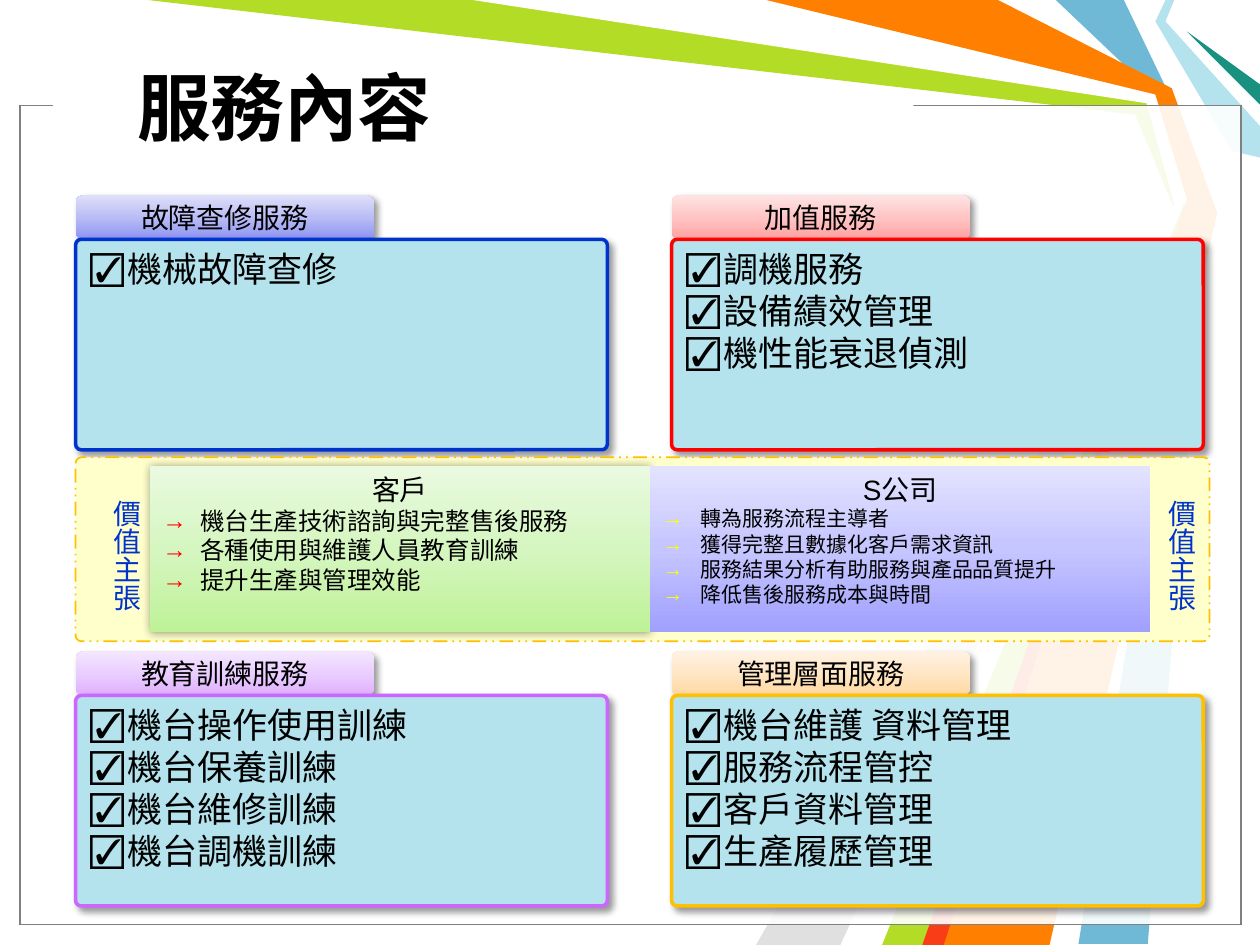
from lxml.etree import SubElement as Sub
from pptx import Presentation
from pptx.dml.color import RGBColor as RGB
from pptx.enum.dml import MSO_LINE as Dash
from pptx.enum.shapes import MSO_SHAPE as Kind
from pptx.enum.text import MSO_ANCHOR as Anchor, PP_ALIGN as Align
from pptx.oxml.ns import qn
from pptx.util import Inches, Pt

HEX = {
    "sky": "6FB9D7", "lime": "B3DC27", "mist": "E0E0E0", "white": "FFFFFF",
    "pale": "B4E3EE", "teal": "189180", "orange": "FF7F00", "flame": "F93D17",
    "black": "000000", "gray": "808080", "blue": "0033CC", "red": "FF0000",
    "violet": "CC66FF", "gold": "FFC000", "cream": "FFFFCC", "yellow": "FFFF00",
}

# Gradient stops, from bottom to top
FADE = {
    "blue": ("8C92F2", "BABDF5", "DEDFF9"),
    "red": ("FFA0A0", "FFC5C5", "FFE3E3"),
    "violet": ("DFAFFF", "EACEFF", "F4E7FF"),
    "gold": ("FFD8A0", "FFE6C5", "FFF2E3"),
    "lime": ("BEF297", "D5F6C0", "EAFAE0"),
    "iris": ("A0A0FF", "C5C5FF", "E3E3FF"),
}

# Background ribbons, from back to front
BANDS = [
    ("sky", [(8.92, 0), (9.29, .77), (9.58, 1.67), (9.11, 7.49), (8.56, 7.49),
             (9.5, 1.67), (9.17, .75), (8.38, 0)]),
    ("lime", [(1.17, 0), (3.83, 0), (9.14, .78), (9.42, 1.69), (7.42, 7.5),
              (6.92, 7.5), (9.35, 1.73), (9.01, .91)]),
    ("mist", [(6.67, 7.5), (9.27, 1.81), (6, 7.5)]),
    ("white", [(3.75, 0), (9.1, .82), (9.32, 1.62), (6.75, 7.5), (7, 7.5),
               (9.41, 1.58), (9.17, .75), (6, 0)]),
    ("pale", [(9.25, 0), (9.17, .17), (9.78, 1.2), (10, 1.25), (10, 1),
              (9.25, .17), (9.32, 0)]),
    ("teal", [(10, .83), (9.42, .25), (10, .67)]),
    ("orange", [(6.08, 0), (7.92, 0), (9.3, .7), (9.66, 1.69), (8.33, 7.5),
                (7.33, 7.5), (9.42, 1.58), (9.17, .75)]),
    ("flame", [(7.32, 7.5), (9.32, 1.83), (7.49, 7.5)]),
]

# Service cards, row by row: colour, heading, items
CARDS = [
    ("blue", "故障查修服務", ["機械故障查修"]),
    ("red", "加值服務", ["調機服務", "設備績效管理", "機性能衰退偵測"]),
    ("violet", "教育訓練服務",
     ["機台操作使用訓練", "機台保養訓練", "機台維修訓練", "機台調機訓練"]),
    ("gold", "管理層面服務",
     ["機台維護 資料管理", "服務流程管控", "客戶資料管理", "生產履歷管理"]),
]

# Value panels: gradient, arrow colour, text size, heading, items
VALUES = [
    ("lime", "red", 14, "客戶",
     ["機台生產技術諮詢與完整售後服務", "各種使用與維護人員教育訓練", "提升生產與管理效能"]),
    ("iris", "yellow", 12, "S公司",
     ["轉為服務流程主導者", "獲得完整且數據化客戶需求資訊",
      "服務結果分析有助服務與產品品質提升", "降低售後服務成本與時間"]),
]


def rgb(name):
    return RGB.from_string(HEX[name])


def paint(shape, fill, line=None, width=1):
    shape.shadow.inherit = False
    if fill in HEX:
        shape.fill.solid()
        shape.fill.fore_color.rgb = rgb(fill)
    if line:
        shape.line.color.rgb = rgb(line)
        shape.line.width = Pt(width)
    else:
        shape.line.fill.background()


def fade(shape, name):
    shape.fill.gradient()
    shape.fill.gradient_angle = 90
    stops = shape._element.spPr.find(".//" + qn("a:gsLst"))
    for old in list(stops):
        stops.remove(old)
    for step, code in enumerate(FADE[name]):
        stop = Sub(stops, qn("a:gs"), pos=str(step * 50000))
        Sub(stop, qn("a:srgbClr"), val=code)


def shade(shape, blur=4, dist=3, turn=45):
    root = shape._element.spPr.find(qn("a:effectLst"))
    cast = Sub(root, qn("a:outerShdw"), blurRad=str(Pt(blur)), dist=str(Pt(dist)),
               dir=str(turn * 60000), algn="ctr", rotWithShape="0")
    tint = Sub(cast, qn("a:srgbClr"), val=HEX["black"])
    Sub(tint, qn("a:alpha"), val="40000")


def block(slide, box, fill, kind=Kind.RECTANGLE, adj=None, **line):
    shape = slide.shapes.add_shape(kind, *map(Inches, box))
    if adj is not None:
        shape.adjustments[0] = adj
    paint(shape, fill, **line)
    return shape


def ribbon(slide, fill, spots):
    spots = [(Inches(x), Inches(y)) for x, y in spots]
    pen = slide.shapes.build_freeform(*spots[0])
    pen.add_line_segments(spots[1:], close=True)
    paint(pen.convert_to_shape(), fill)


def bullet(para, mark, tint=None):
    props = para._p.get_or_add_pPr()
    for key, val in {"marL": Inches(.3), "indent": Inches(-.3)}.items():
        props.set(key, str(val))
    if tint:
        Sub(Sub(props, qn("a:buClr")), qn("a:srgbClr"), val=HEX[tint])
    Sub(props, qn("a:buFont"), typeface="Arial")
    Sub(props, qn("a:buChar"), char=mark)


def write(shape, texts, size, tint="black", bold=False, align=Align.LEFT,
          mark=None, dye=None, first=True):
    frame = shape.text_frame
    for text in texts:
        para = frame.paragraphs[0] if first else frame.add_paragraph()
        first = False
        para.alignment = align
        if mark:
            bullet(para, mark, dye)
        run = para.add_run()
        run.text = text
        look = {"name": "Arial", "size": Pt(size), "bold": bold}
        for key, val in look.items():
            setattr(run.font, key, val)
        run.font.color.rgb = rgb(tint)


def label(slide, box, text, size, wrap=True, anchor=Anchor.TOP, **look):
    shape = slide.shapes.add_textbox(*map(Inches, box))
    form = {"word_wrap": wrap, "vertical_anchor": anchor}
    for key, val in form.items():
        setattr(shape.text_frame, key, val)
    write(shape, [text], size, **look)
    return shape


def card(slide, left, top, hue, head, items):
    tab = block(slide, (left, top, 2.37, .35), None, Kind.ROUNDED_RECTANGLE)
    fade(tab, hue)
    shade(tab)
    tab.text_frame.vertical_anchor = Anchor.MIDDLE
    write(tab, [head], 16, align=Align.CENTER)
    body = block(slide, (left, top + .35, 4.22, 1.67), "pale",
                 Kind.ROUNDED_RECTANGLE, .026, line=hue, width=2)
    shade(body)
    body.text_frame.vertical_anchor = Anchor.TOP
    write(body, items, 20, mark="☑")


def panel(slide, left, hue, dye, size, head, items):
    shape = block(slide, (left, 3.7, 3.97, 1.32), None)
    fade(shape, hue)
    shape.text_frame.vertical_anchor = Anchor.TOP
    write(shape, [head], 16, align=Align.CENTER)
    write(shape, items, size, mark="→", dye=dye, first=False)
    return shape


def main():
    deck = Presentation()
    deck.slide_width, deck.slide_height = Inches(10), Inches(7.5)
    slide = deck.slides.add_slide(deck.slide_layouts[6])

    # Ribbons under two translucent sheets
    for fill, spots in BANDS:
        ribbon(slide, fill, spots)
    for line in ("black", "gray"):
        sheet = block(slide, (.16, .84, 9.69, 6.5), "white", line=line, width=.75)
        tint = sheet._element.spPr.find(qn("a:solidFill"))[0]
        Sub(tint, qn("a:alpha"), val="69000")

    # Title over a gap in the frame
    block(slide, (.42, .74, 6.83, .17), "white")
    label(slide, (.99, .22, 6.89, 1.25), "服務內容", 42, bold=True, anchor=Anchor.MIDDLE)

    # Service cards in a two by two grid
    for spot, data in enumerate(CARDS):
        row, col = divmod(spot, 2)
        card(slide, .6 + col * 4.73, 1.55 + row * 3.62, *data)

    # Value band
    band = block(slide, (.6, 3.63, 9, 1.46), "cream", Kind.ROUNDED_RECTANGLE,
                 .032, line="gold")
    band.line.dash_style = Dash.DASH_DOT_DOT
    panels = [panel(slide, 1.19 + col * 3.97, *data) for col, data in enumerate(VALUES)]
    shade(panels[0], 5, 0, 0)
    for left in (.72, 9.09):
        side = label(slide, (left, 3.87, .47, 1), "價值主張", 16, wrap=False, tint="blue")
        side.text_frame._txBody.bodyPr.set("vert", "eaVert")

    deck.save("out.pptx")


if __name__ == "__main__":
    main()
